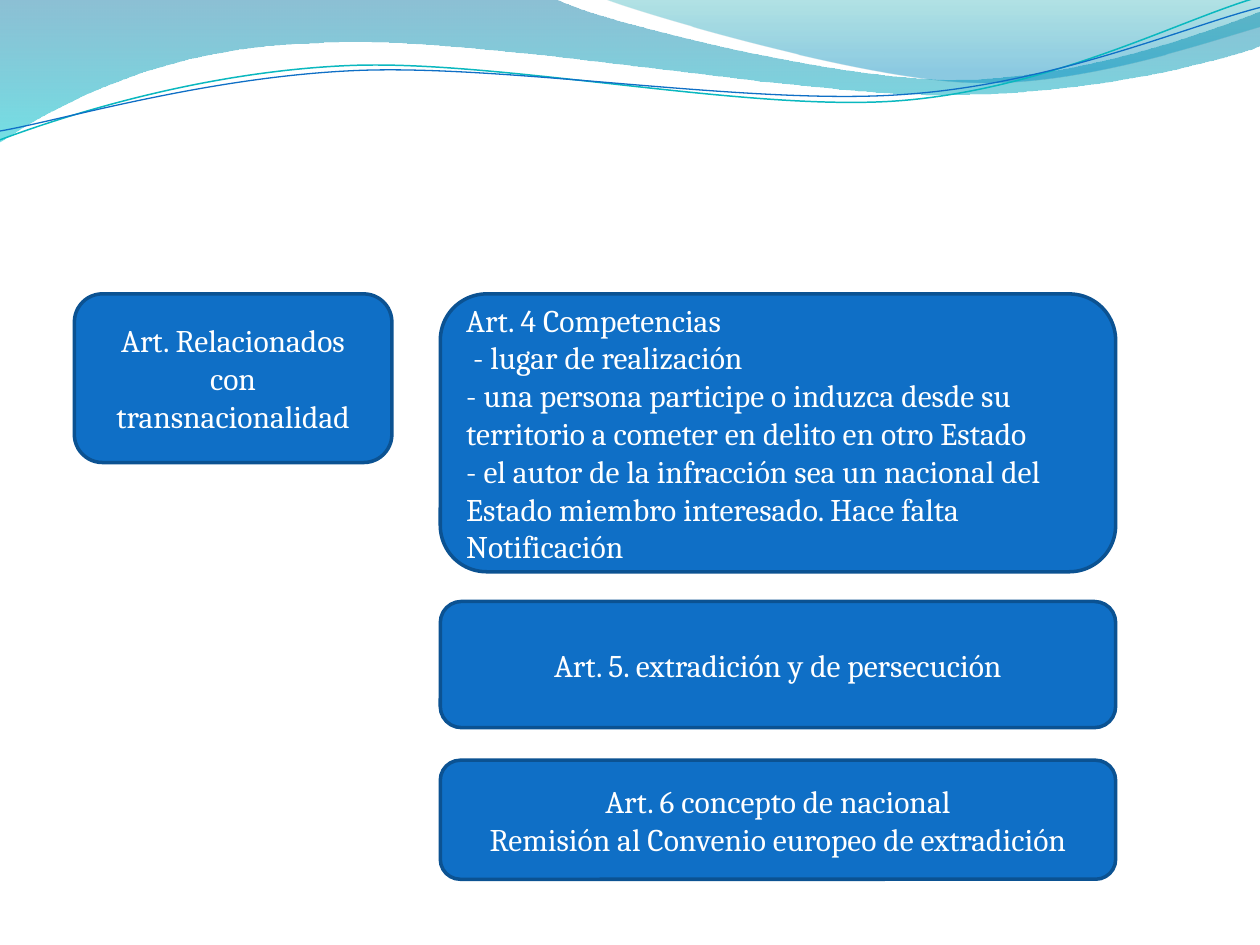
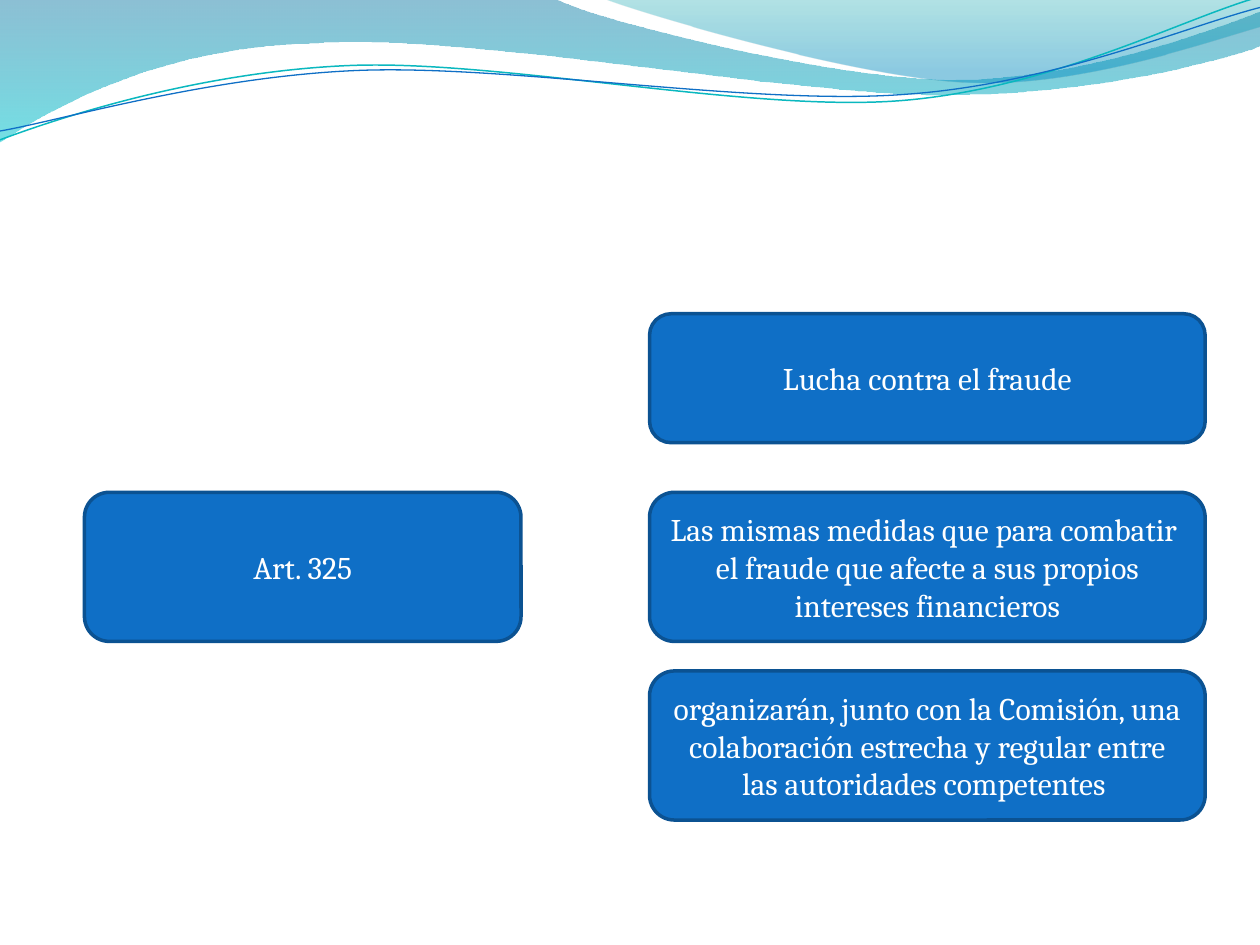
from math import cos, radians, sin

from lxml.etree import SubElement
from pptx import Presentation
from pptx.dml.color import RGBColor
from pptx.enum.shapes import MSO_SHAPE
from pptx.enum.text import MSO_ANCHOR, PP_ALIGN
from pptx.oxml.ns import qn
from pptx.util import Inches, Pt

WIDTH, HEIGHT = Inches(10), Inches(7.5)
COLUMN, ROW = WIDTH / 100, HEIGHT / 100
FONT = "Cambria"
TILT = 2.7
WHITE = RGBColor(0xFF, 0xFF, 0xFF)
BLUE = RGBColor(0x0F, 0x6F, 0xC6)
NAVY = RGBColor(0x0B, 0x52, 0x92)
TEAL = RGBColor(0x0A, 0xB8, 0xBF)
DEEP_SEA = RGBColor(0x00, 0x74, 0xA1)
LAGOON = RGBColor(0x00, 0xC6, 0xCF)
SURF = RGBColor(0x00, 0xA1, 0xA9)
SKY = RGBColor(0x00, 0x8B, 0xBF)

LARGE_WAVE = [
    (0, 0), (4.4, -0.01),
    (4.76, 0.17, 6.64, 0.63, 7.58, 0.63), (8.53, 0.63, 9.58, 0.26, 10, 0.09),
    (10.01, 0.36),
    (9.83, 0.44, 8.7, 0.76, 7.46, 0.75), (6.22, 0.75, 3.82, 0.28, 2.57, 0.34),
    (1.29, 0.36, 0.46, 0.83, -0.01, 1.13), (0, 0),
]
SMALL_WAVE = [
    (4.79, -0.01),
    (5.09, 0.11, 6.82, 0.62, 7.69, 0.65), (8.56, 0.69, 9.61, 0.32, 10, 0.21),
    (10, 0), (4.79, -0.01),
]
TEAL_CREST = [
    (0, 1.11),
    (0.48, 0.93, 1.58, 0.57, 2.77, 0.52), (3.95, 0.47, 5.93, 0.89, 7.13, 0.8),
    (8.33, 0.71, 9.38, 0.15, 9.98, -0.02),
]
BLUE_CREST = [
    (0, 1.04),
    (0.47, 0.96, 1.64, 0.61, 2.83, 0.56), (4.03, 0.51, 5.97, 0.84, 7.17, 0.75),
    (8.36, 0.67, 9.41, 0.21, 10, 0.06),
]


def level(outline, pivot):
    """Turn an outline clockwise by the tilt about a pivot."""
    cosine, sine = cos(radians(TILT)), sin(radians(TILT))

    def turn(x, y):
        """Turn one point."""
        across, down = x - pivot[0], y - pivot[1]
        return (pivot[0] + across * cosine - down * sine,
                pivot[1] + across * sine + down * cosine)

    return [sum((turn(*segment[i:i + 2]) for i in range(0, len(segment), 2)), ())
            for segment in outline]


def add_outline(slide, outline, closed):
    """Draw an outline of lines (2 numbers) and Bézier curves (6 numbers)."""
    start, *rest = [(Inches(segment[i]), Inches(segment[i + 1]))
                    for segment in outline for i in range(0, len(segment), 2)]
    builder = slide.shapes.build_freeform(*start, scale=1.0)
    builder.add_line_segments(rest, close=closed)
    curve = builder.convert_to_shape()
    curve.shadow.inherit = False
    sides = iter(list(curve.element.iter(qn("a:lnTo"))))
    for segment in outline[1:]:
        corners = [next(sides) for _ in range(len(segment) // 2)]
        if len(corners) == 3:
            bend = corners[0].makeelement(qn("a:cubicBezTo"))
            corners[0].addprevious(bend)
            for corner in corners:
                bend.append(corner[0])
                corner.getparent().remove(corner)
    return curve


def add_wave(slide, outline, stops):
    """Draw a wave shaded downwards through (position, colour, opacity) stops."""
    wave = add_outline(slide, outline, True)
    wave.line.fill.background()
    wave.fill.gradient()
    wave.fill.gradient_angle = 270
    for stop, (position, colour, _) in zip(wave.fill.gradient_stops, stops):
        stop.position = position
        stop.color.rgb = colour
    for shade, (_, _, opacity) in zip(wave.element.spPr.iter(qn("a:srgbClr")), stops):
        SubElement(shade, qn("a:alpha"), val=str(opacity * 1000))
    return wave


def add_crest(slide, outline, pivot, colour, weight):
    """Draw a thin tilted line along the waves."""
    crest = add_outline(slide, level(outline, pivot), False)
    crest.rotation = 360 - TILT
    crest.fill.background()
    crest.line.color.rgb = colour
    crest.line.width = Pt(weight)
    return crest


def decorate_layout(layout, slide):
    """Give the layout the wave band that every slide shares."""
    for placeholder in list(layout.placeholders):
        placeholder.element.getparent().remove(placeholder.element)
    band = [
        add_wave(slide, LARGE_WAVE, [(0, DEEP_SEA, 45), (1, LAGOON, 55)]),
        add_wave(slide, SMALL_WAVE, [(0, SURF, 30), (0.8, SKY, 45)]),
        add_crest(slide, TEAL_CREST, (4.99, 0.58), TEAL, 0.85),
        add_crest(slide, BLUE_CREST, (5, 0.59), BLUE, 0.75),
    ]
    for part in band:
        layout.shapes.element.append(part.element)


def add_card(slide, left, top, columns, rows, text, align=PP_ALIGN.CENTER):
    """Place a rounded blue card on the grid."""
    card = slide.shapes.add_shape(
        MSO_SHAPE.ROUNDED_RECTANGLE,
        round(left * COLUMN), round(top * ROW), round(columns * COLUMN), round(rows * ROW))
    card.shadow.inherit = False
    card.fill.solid()
    card.fill.fore_color.rgb = BLUE
    card.line.color.rgb = NAVY
    card.line.width = Pt(2)
    frame = card.text_frame
    frame.word_wrap = True
    frame.vertical_anchor = MSO_ANCHOR.MIDDLE
    frame.text = text
    for paragraph in frame.paragraphs:
        paragraph.alignment = align
        paragraph.font.name = FONT
        paragraph.font.size = Pt(18)
        paragraph.font.color.rgb = WHITE


def fill_topic(slide, box, topic_columns, topic, detail_columns, details):
    """Set a topic card at the left of the box and its details at the right."""
    left, top, columns = box
    topic_top, topic_rows, topic_text = topic
    add_card(slide, left, top + topic_top, topic_columns, topic_rows, topic_text)
    detail_left = left + columns - detail_columns
    for detail_top, detail_rows, *content in details:
        add_card(slide, detail_left, top + detail_top, detail_columns, detail_rows, *content)


def main():
    """Build both slides and save them."""
    deck = Presentation()
    deck.slide_width, deck.slide_height = WIDTH, HEIGHT
    layout = deck.slide_layouts[6]
    transnational, fraud = (deck.slides.add_slide(layout) for _ in range(2))
    decorate_layout(layout, transnational)

    competences = "\v".join([
        "Art. 4 Competencias",
        " - lugar de realización",
        "- una persona participe o induzca desde su territorio a cometer en delito en otro Estado",
        "- el autor de la infracción sea un nacional del Estado miembro interesado. "
        "Hace falta Notificación",
    ])
    fill_topic(
        transnational, (5.9, 31.1, 82.65),
        25.2, (0, 17.85, "Art. Relacionados con transnacionalidad"),
        53.6, [
            (0, 29.4, competences, PP_ALIGN.LEFT),
            (32.55, 13.35, "Art. 5. extradición y de persecución"),
            (49.35, 12.6, "Art. 6 concepto de nacional\nRemisión al Convenio europeo de extradición"),
        ])

    pitch, rows = 18.9, 15.78
    fill_topic(
        fraud, (6.7, 33.2, 88.95),
        34.65, (pitch, rows, "Art. 325"),
        44.1, [
            (0, 13.65, "Lucha contra el fraude"),
            (pitch, rows, "Las mismas medidas que para combatir  el fraude que afecte a sus "
                          "propios intereses financieros"),
            (2 * pitch, rows, "organizarán, junto con la Comisión, una colaboración estrecha y "
                              "regular entre las autoridades competentes "),
        ])
    deck.save("out.pptx")


if __name__ == "__main__":
    main()
